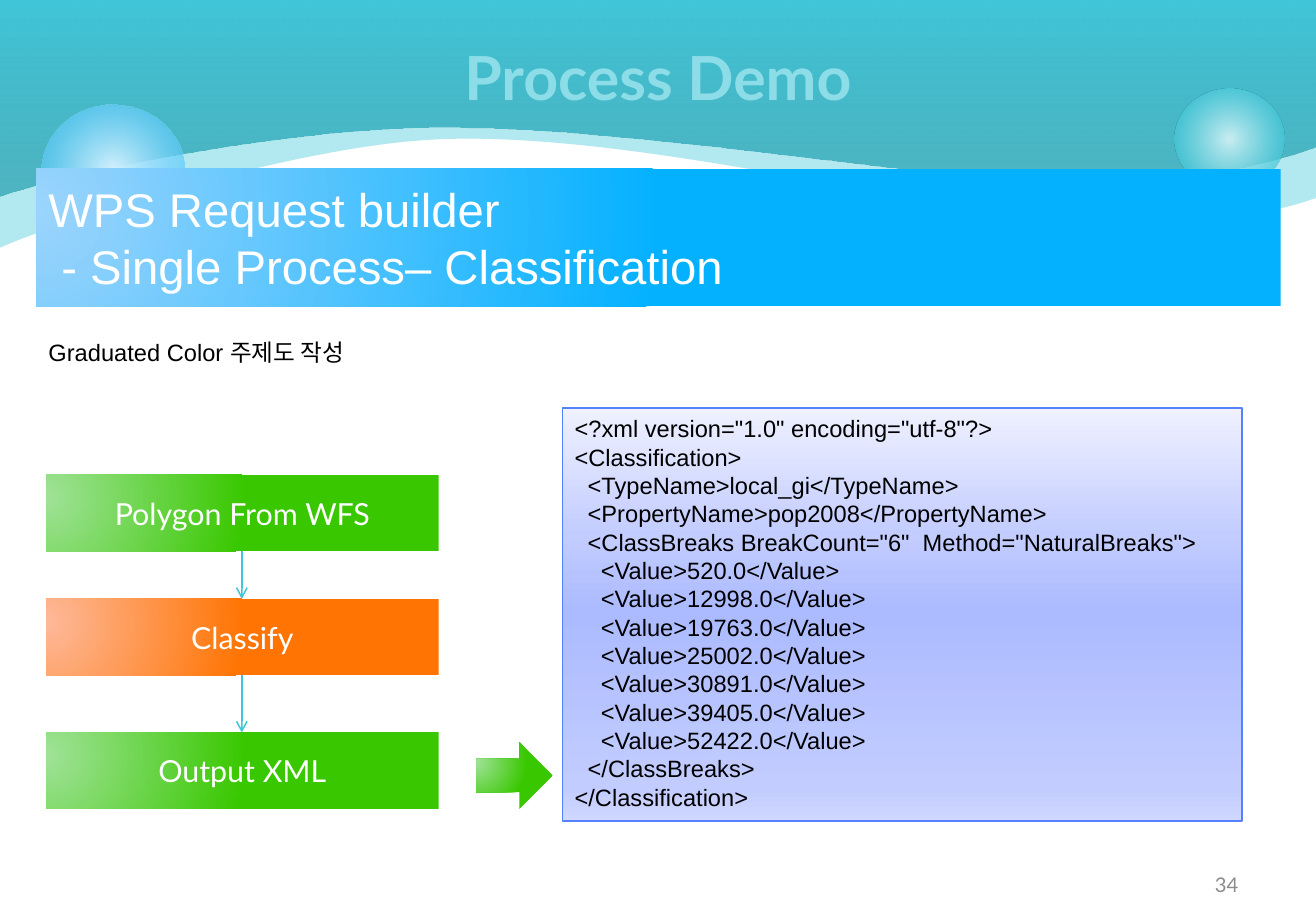
from lxml.etree import SubElement
from pptx import Presentation
from pptx.dml.color import RGBColor
from pptx.enum.shapes import MSO_CONNECTOR as Connector, MSO_SHAPE as Shape
from pptx.enum.text import MSO_ANCHOR as Anchor, PP_ALIGN as Align
from pptx.oxml.ns import qn
from pptx.util import Emu, Pt

PX = 9144
WIDTH, HEIGHT = 1083, 750
BLUE = [(0, "9BD4FC", 100), (100, "04B1FF", 100)]
GREEN = [(0, "A0E298", 100), (100, "39C800", 100)]
ORANGE = [(0, "FEB99A", 100), (100, "FF7402", 100)]
LAVENDER = [(0, "EFF1FF", 100), (31, "C2CCFF", 100), (49, "ACBBFF", 100),
            (92, "C2CCFF", 100), (100, "D0D8FF", 100)]
SIDE_FOCUS = (0, 30, 100, 70)
CENTER_FOCUS = (50, 50, 50, 50)

WAVES = [
    ([
        [(0, 54), (0, 150), (0, 204)],
        [(36, 187), (231, 122), (355, 115)],
        [(479, 108), (657, 148), (744, 161)],
        [(832, 173), (977, 201), (1083, 163)],
    ], [(0, "40C6D8", 40)]),
    ([
        [(0, 54), (0, 108), (0, 162)],
        [(49, 144), (220, 108), (353, 105)],
        [(486, 102), (713, 139), (798, 144)],
        [(884, 149), (977, 159), (1083, 121)],
    ], [(0, "249EAE", 69), (100, "40C6D8", 100)]),
]
BUBBLES = [
    ((967, 73, 90, 83), [(0, "D9F4F7", 90), (76, "40C6D8", 70)]),
    ((934, 148, 46, 42), [(0, "DAFACD", 90), (76, "4CD416", 70)]),
    ((34, 86, 118, 109), [(0, "D6F2FE", 100), (100, "33BDFB", 54)]),
]
STEPS = [("Polygon From WFS", 391, GREEN), ("Classify", 493, ORANGE),
         ("Output XML", 603, GREEN)]
STEP_LEFT, STEP_WIDTH, STEP_HEIGHT = 38, 323, 63
XML_CODE = """<?xml version="1.0" encoding="utf-8"?>
<Classification>
  <TypeName>local_gi</TypeName>
  <PropertyName>pop2008</PropertyName>
  <ClassBreaks BreakCount="6"  Method="NaturalBreaks">
    <Value>520.0</Value>
    <Value>12998.0</Value>
    <Value>19763.0</Value>
    <Value>25002.0</Value>
    <Value>30891.0</Value>
    <Value>39405.0</Value>
    <Value>52422.0</Value>
  </ClassBreaks>
</Classification>"""


def px(length):
    return Emu(length * PX)


def color(value):
    return RGBColor.from_string(value)


def write(shape, text, size=14, font="Arial", ink="000000", bold=False,
          align=Align.LEFT, anchor=Anchor.MIDDLE):
    frame = shape.text_frame
    frame.word_wrap = True
    frame.vertical_anchor = anchor
    for index, line in enumerate(text.split("\n")):
        paragraph = frame.add_paragraph() if index else frame.paragraphs[0]
        paragraph.alignment = align
        run = paragraph.add_run()
        run.text = line
        run.font.size = Pt(size)
        run.font.name = font
        run.font.bold = bold
        run.font.color.rgb = color(ink)


def add_tone(parent, value, opacity):
    tone = SubElement(parent, qn("a:srgbClr"), val=value)
    if opacity < 100:
        SubElement(tone, qn("a:alpha"), val=str(opacity * 1000))


class SlideBuilder:
    """Draws styled elements on the current slide."""

    def __init__(self, slide):
        self.slide = slide
        self.shapes = slide.shapes
        self.line_color = "40C6D8"
        self.line_width = Pt(0.9)

    def paint(self, shape, stops, focus=None, angle=0):
        shape.shadow.inherit = False
        shape.line.fill.background()
        shape.fill.background()
        properties = shape._element.spPr
        kind = "a:gradFill" if len(stops) > 1 else "a:solidFill"
        fill = SubElement(properties, qn(kind))
        properties.replace(properties.find(qn("a:noFill")), fill)
        if len(stops) == 1:
            add_tone(fill, *stops[0][1:])
            return
        fill.set("rotWithShape", "1")
        stop_list = SubElement(fill, qn("a:gsLst"))
        for position, value, opacity in stops:
            stop = SubElement(stop_list, qn("a:gs"), pos=str(position * 1000))
            add_tone(stop, value, opacity)
        if focus:
            circle = SubElement(fill, qn("a:path"), path="circle")
            sides = {side: str(share * 1000) for side, share in zip("ltrb", focus)}
            SubElement(circle, qn("a:fillToRect"), **sides)
        else:
            SubElement(fill, qn("a:lin"), ang=str(angle * 60000), scaled="0")

    def wave(self, curves, stops):
        corners = [curve[-1] for curve in curves] + [(WIDTH + 1, 0), (0, 0)]
        builder = self.shapes.build_freeform(0, 0, scale=1.0)
        builder.add_line_segments([(px(x), px(y)) for x, y in corners], close=True)
        shape = builder.convert_to_shape()
        lines = list(shape._element.spPr.iter(qn("a:lnTo")))
        for line, curve in zip(lines, curves):
            outline = line.getparent()
            bend = SubElement(outline, qn("a:cubicBezTo"))
            outline.replace(line, bend)
            for x, y in curve:
                SubElement(bend, qn("a:pt"), x=str(px(x)), y=str(px(y)))
        self.paint(shape, stops, angle=270)

    def block(self, kind, box, stops, focus=None, angle=0):
        shape = self.shapes.add_shape(kind, *map(px, box))
        self.paint(shape, stops, focus, angle)
        return shape

    def label(self, box, text, **style):
        write(self.shapes.add_textbox(*map(px, box)), text, **style)

    def arrow(self, x, top, bottom):
        connector = self.shapes.add_connector(
            Connector.STRAIGHT, px(x), px(top), px(x), px(bottom))
        connector.line.color.rgb = color(self.line_color)
        connector.line.width = self.line_width
        properties = connector._element.spPr
        SubElement(properties.find(qn("a:ln")), qn("a:tailEnd"), type="arrow")
        SubElement(properties, qn("a:effectLst"))


def main():
    presentation = Presentation()
    presentation.slide_width, presentation.slide_height = px(WIDTH), px(HEIGHT)
    slide = presentation.slides.add_slide(presentation.slide_layouts[6])
    builder = SlideBuilder(slide)

    for curves, stops in WAVES:
        builder.wave(curves, stops)
    for box, stops in BUBBLES:
        builder.block(Shape.OVAL, box, stops, CENTER_FOCUS)

    builder.label((776, 715, 253, 27), "34", size=12, font="Lato",
                  ink="8C8C8C", align=Align.RIGHT)
    builder.label((54, 0, 975, 125), "Process Demo", size=36, font="Lato",
                  ink="8CDDE8", bold=True, align=Align.CENTER)

    banner = builder.block(Shape.RECTANGLE, (30, 139, 1024, 113), BLUE, SIDE_FOCUS)
    write(banner, "WPS Request builder\n - Single Process– Classification",
          size=28, ink="FFFFFF")

    for name, top, stops in STEPS:
        box = (STEP_LEFT, top, STEP_WIDTH, STEP_HEIGHT)
        step = builder.block(Shape.RECTANGLE, box, stops, SIDE_FOCUS)
        write(step, name, size=18, font="Lato", ink="FFFFFF", align=Align.CENTER)
    for (_, top, _), (_, next_top, _) in zip(STEPS, STEPS[1:]):
        builder.arrow(STEP_LEFT + STEP_WIDTH // 2, top + STEP_HEIGHT, next_top)

    builder.block(Shape.RIGHT_ARROW, (392, 611, 63, 55), GREEN, SIDE_FOCUS)
    code = builder.block(Shape.RECTANGLE, (463, 336, 559, 340), LAVENDER, angle=90)
    code.line.color.rgb = color("5581FD")
    code.line.width = builder.line_width
    write(code, XML_CODE, anchor=Anchor.TOP)
    builder.label((30, 273, 898, 34), "Graduated Color 주제도 작성", anchor=Anchor.TOP)

    presentation.save("out.pptx")


if __name__ == "__main__":
    main()
